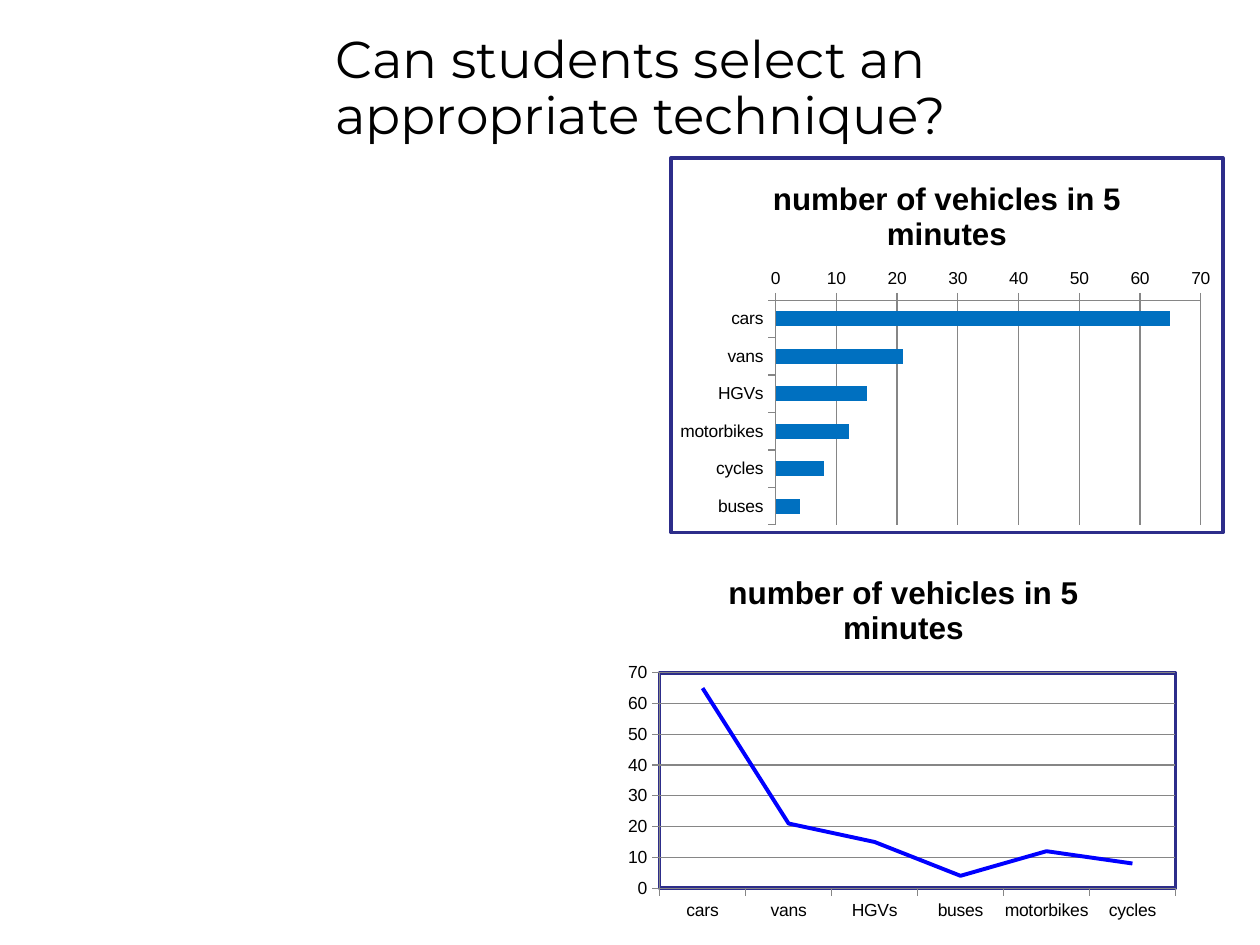
import dataclasses

import lxml.etree
import pptx
import pptx.chart.data
import pptx.dml.color
import pptx.enum.chart
import pptx.enum.text
import pptx.oxml
import pptx.oxml.ns
import pptx.util

Inches = pptx.util.Inches
Pt = pptx.util.Pt
ChartType = pptx.enum.chart.XL_CHART_TYPE
qn = pptx.oxml.ns.qn


@dataclasses.dataclass(frozen=True)
class Theme:
    heading_font: str = "Montserrat"
    chart_font: str = "Arial"
    text: str = "000000"
    paper: str = "FFFFFF"
    frame: str = "2D2D8A"
    axis: str = "868686"
    bar: str = "0070C0"
    line: str = "0000FF"
    heading_size: float = 29.6
    chart_title_size: float = 18
    label_size: float = 10
    frame_width: float = 2
    series_width: float = 2.25


class SlideBuilder:
    def __init__(self, deck, theme):
        self.theme = theme
        self.slide = deck.slides.add_slide(deck.slide_layouts[5])

    def style_font(self, font, name, size, bold=False):
        font.name = name
        font.size = Pt(size)
        font.bold = bold
        font.color.rgb = pptx.dml.color.RGBColor.from_string(self.theme.text)

    def title(self, text, left, top, width, height):
        box = self.slide.shapes.title
        box.left, box.top = Inches(left), Inches(top)
        box.width, box.height = Inches(width), Inches(height)
        frame = box.text_frame
        frame.text = text
        frame.word_wrap = True
        frame.auto_size = pptx.enum.text.MSO_AUTO_SIZE.NONE
        frame.vertical_anchor = pptx.enum.text.MSO_ANCHOR.MIDDLE
        para = frame.paragraphs[0]
        para.alignment = pptx.enum.text.PP_ALIGN.LEFT
        para.line_spacing = 0.9
        self.style_font(para.runs[0].font, self.theme.heading_font,
                        self.theme.heading_size)

    def chart(self, kind, title, counts, position, plot):
        """Add a one-series chart; plot is the inner plot area as fractions."""
        theme = self.theme
        data = pptx.chart.data.CategoryChartData()
        data.categories = list(counts)
        data.add_series("Series 1", list(counts.values()))
        chart = self.slide.shapes.add_chart(
            kind, *map(Inches, position), data).chart
        chart.has_legend = False
        self.style_font(chart.font, theme.chart_font, theme.label_size)
        chart.has_title = True
        frame = chart.chart_title.text_frame
        frame.text = title
        self.style_font(frame.paragraphs[0].runs[0].font, theme.chart_font,
                        theme.chart_title_size, bold=True)
        chart.chart_title.include_in_layout = False
        for axis in (chart.category_axis, chart.value_axis):
            axis.major_tick_mark = pptx.enum.chart.XL_TICK_MARK.OUTSIDE
            axis.minor_tick_mark = pptx.enum.chart.XL_TICK_MARK.NONE
            self.style_line(axis.format.line, theme.axis, 0.75)
        values = chart.value_axis
        values.minimum_scale, values.maximum_scale = 0, 70
        values.major_unit = 10
        values.has_major_gridlines = True
        self.style_line(values.major_gridlines.format.line, theme.axis, 0.75)
        self.place_plot(chart, plot)
        return chart

    def bar_chart(self, title, counts, position, plot):
        chart = self.chart(ChartType.BAR_CLUSTERED, title, counts, position, plot)
        chart.category_axis.reverse_order = True
        bars = chart.plots[0]
        bars.gap_width = 150
        bars.vary_by_categories = False
        fill = bars.series[0].format.fill
        fill.solid()
        fill.fore_color.rgb = pptx.dml.color.RGBColor.from_string(self.theme.bar)
        chart.element.find(qn("c:chart")).addnext(self.framed_area())

    def line_chart(self, title, counts, position, plot):
        chart = self.chart(ChartType.LINE, title, counts, position, plot)
        chart.plots[0].vary_by_categories = False
        series = chart.plots[0].series[0]
        series.smooth = False
        series.marker.style = pptx.enum.chart.XL_MARKER_STYLE.NONE
        self.style_line(series.format.line, self.theme.line,
                        self.theme.series_width)
        chart.element.find(".//" + qn("c:plotArea")).append(self.framed_area())

    @staticmethod
    def style_line(line, color, width):
        line.color.rgb = pptx.dml.color.RGBColor.from_string(color)
        line.width = Pt(width)

    @staticmethod
    def place_plot(chart, plot):
        area = chart.element.find(".//" + qn("c:plotArea"))
        for previous in area.findall(qn("c:layout")):
            area.remove(previous)
        layout = lxml.etree.Element(qn("c:layout"))
        manual = lxml.etree.SubElement(layout, qn("c:manualLayout"))
        settings = [("layoutTarget", "inner"), ("xMode", "edge"), ("yMode", "edge")]
        settings += zip("xywh", plot)
        for tag, value in settings:
            lxml.etree.SubElement(manual, qn("c:" + tag), val=str(value))
        area.insert(0, layout)

    def framed_area(self):
        """Return chart shape properties with a plain fill and a frame."""
        theme = self.theme
        return pptx.oxml.parse_xml(
            f'<c:spPr {pptx.oxml.ns.nsdecls("c", "a")}>'
            f'<a:solidFill><a:srgbClr val="{theme.paper}"/></a:solidFill>'
            f'<a:ln w="{Pt(theme.frame_width)}"><a:solidFill>'
            f'<a:srgbClr val="{theme.frame}"/></a:solidFill></a:ln></c:spPr>')


def main():
    deck = pptx.Presentation()
    deck.slide_width, deck.slide_height = Inches(10), Inches(7.5)
    builder = SlideBuilder(deck, Theme())
    builder.title("Can students select an appropriate technique?",
                  2.56, 0.2, 7.29, 1.03)

    chart_title = "number of vehicles in 5 minutes"
    ranked = {"cars": 65, "vans": 21, "HGVs": 15,
              "motorbikes": 12, "cycles": 8, "buses": 4}
    line_order = ["cars", "vans", "HGVs", "buses", "motorbikes", "cycles"]
    builder.bar_chart(chart_title, ranked, (5.31, 1.24, 4.41, 3),
                      (0.19, 0.38, 0.77, 0.6))
    builder.line_chart(chart_title, {name: ranked[name] for name in line_order},
                       (4.92, 4.38, 4.5, 3), (0.07, 0.32, 0.91, 0.57))
    deck.save("out.pptx")


if __name__ == "__main__":
    main()
